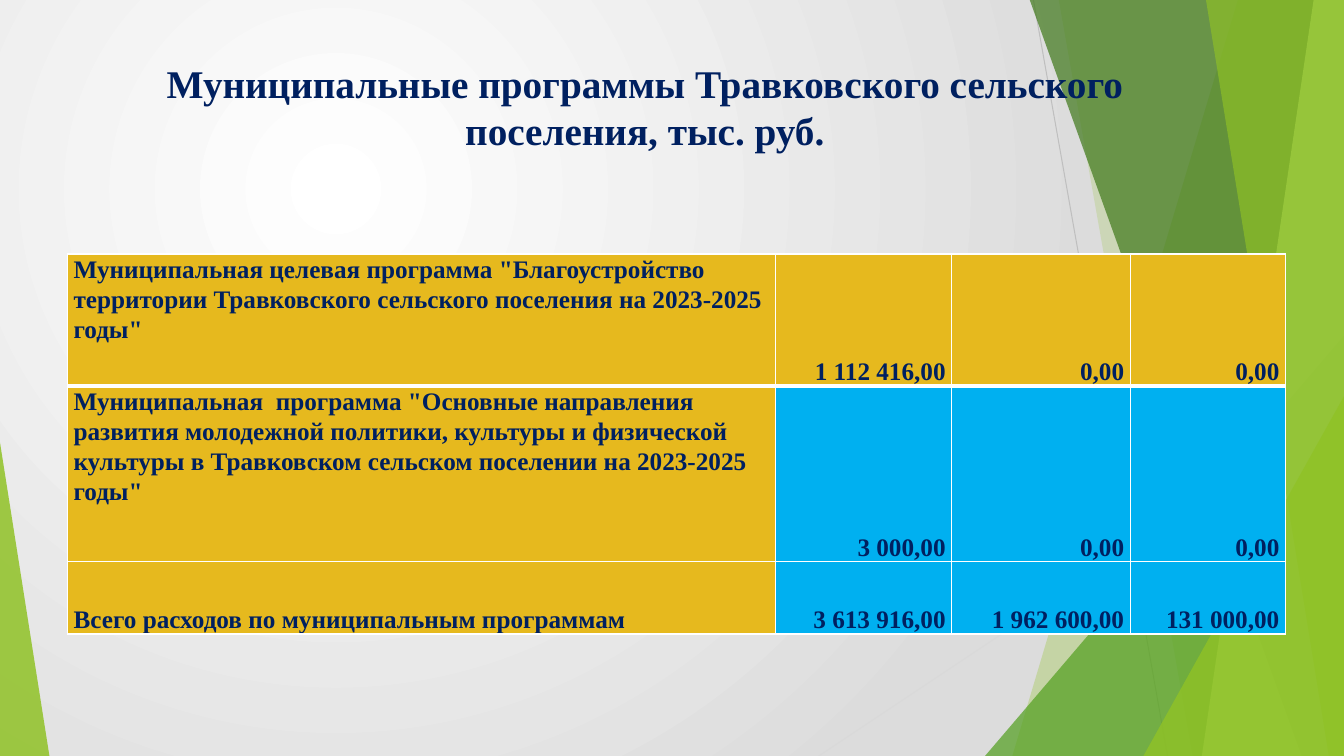
from dataclasses import dataclass

from lxml import etree
from pptx import Presentation
from pptx.dml.color import RGBColor
from pptx.enum.shapes import MSO_CONNECTOR, MSO_SHAPE
from pptx.enum.text import MSO_ANCHOR, MSO_AUTO_SIZE, PP_ALIGN
from pptx.oxml.ns import qn
from pptx.util import Pt

PX = 9144  # 100 px to the inch
WIDTH, HEIGHT = 1333, 750
TITLE_ONLY = 5
STRAIGHT, TRIANGLE = MSO_CONNECTOR.STRAIGHT, MSO_SHAPE.ISOSCELES_TRIANGLE
TOP, BOTTOM = MSO_ANCHOR.TOP, MSO_ANCHOR.BOTTOM
LEFT, CENTER, RIGHT = PP_ALIGN.LEFT, PP_ALIGN.CENTER, PP_ALIGN.RIGHT
NO_AUTOFIT = MSO_AUTO_SIZE.NONE


@dataclass(frozen=True)
class Theme:
    font: str = "Times New Roman"
    title_size: int = 28
    cell_size: int = 18
    ink: str = "002060"
    light: str = "FFFFFF"
    shade: str = "DCDCDC"
    gold: str = "E6B91E"
    blue: str = "00B0F0"
    green: str = "90C226"
    leaf: str = "54A021"
    forest: str = "3F7819"
    lime: str = "C0E474"
    rays: tuple = ("BFBFBF", "D9D9D9")


THEME = Theme()

TITLE = "Муниципальные программы Травковского сельского поселения, тыс. руб."
COLUMNS = (702, 175, 177, 154)
# row height, anchor of the name, fill of the amounts, cell texts
PROGRAMS = (
    (131, TOP, THEME.gold,
     ('Муниципальная целевая программа "Благоустройство территории '
      'Травковского сельского поселения на 2023-2025 годы"',
      "1 112 416,00", "0,00", "0,00")),
    (174, TOP, THEME.blue,
     ('Муниципальная  программа "Основные направления развития молодежной '
      'политики, культуры и физической культуры в Травковском сельском '
      'поселении на 2023-2025  годы"',
      "3 000,00", "0,00", "0,00")),
    (72, BOTTOM, THEME.blue,
     ("Всего расходов по муниципальным программам",
      "3 613 916,00", "1 962 600,00", "131 000,00")),
)


def rgb(value):
    return RGBColor.from_string(value)


def set_attrs(obj, **values):
    for name, value in values.items():
        setattr(obj, name, value)


def write(tf, text, size, align, spacing=1.0):
    p = tf.paragraphs[0]
    set_attrs(p, alignment=align, line_spacing=spacing)
    r = p.add_run()
    r.text = text
    set_attrs(r.font, name=THEME.font, size=Pt(size), bold=True)
    r.font.color.rgb = rgb(THEME.ink)


def paint(sp, color, opacity):
    """Fill with a translucent colour, without outline or shadow."""
    sp.shadow.inherit = False
    sp.line.fill.background()
    sp.fill.solid()
    sp.fill.fore_color.rgb = rgb(color)
    clr = sp.fill._xPr.find(".//" + qn("a:srgbClr"))
    etree.SubElement(clr, qn("a:alpha"), val=str(opacity * 1000))


def add_ray(slide, start, end, color):
    line = slide.shapes.add_connector(
        STRAIGHT, *(v * PX for v in (*start, *end)))
    line.line.color.rgb = rgb(color)
    line.line.width = Pt(0.75)
    etree.SubElement(line._element.spPr, qn("a:effectLst"))


def add_band(slide, box, top_x, bottom_x, color, opacity):
    """A band from a slanted left edge to the right side of the box."""
    x, y, w, h = box
    pen = slide.shapes.build_freeform(top_x, y, scale=PX)
    pen.add_line_segments(
        [(x + w, y), (x + w, y + h), (bottom_x, y + h)], close=True)
    paint(pen.convert_to_shape(), color, opacity)


def add_corner(slide, box, apex, color, opacity):
    sp = slide.shapes.add_shape(TRIANGLE, *(v * PX for v in box))
    sp.adjustments[0] = apex
    paint(sp, color, opacity)


def add_background(slide):
    fill = slide.background.fill
    fill.gradient()
    stops = zip(fill.gradient_stops, (0, 1), (THEME.light, THEME.shade))
    for stop, position, color in stops:
        stop.position = position
        stop.color.rgb = rgb(color)
    grad = slide._element.find(".//" + qn("a:gradFill"))
    grad.remove(grad.find(qn("a:lin")))
    circle = etree.SubElement(grad, qn("a:path"), {"path": "circle"})
    etree.SubElement(circle, qn("a:fillToRect"),
                     l="50000", t="50000", r="100000", b="100000")


def add_facets(slide, box):
    x, y, w, h = box
    right, bottom = x + w, y + h
    band_box = (x, y - 1, w, h + 1)
    add_ray(slide, (x + 1025, y), (x + 1158, bottom), THEME.rays[0])
    add_ray(slide, (right, y + 403), (x + 812, bottom), THEME.rays[1])
    add_band(slide, band_box, x + 1228, x + 1004, THEME.green, 30)
    add_band(slide, band_box, x + 1050, x + 1183, THEME.green, 20)
    add_corner(slide, (right - 356, bottom - 417, 356, 417), 1, THEME.leaf, 72)
    add_band(slide, band_box, x + 1021, x + 1291, THEME.forest, 70)
    add_band(slide, band_box, x + 1303, x + 1192, THEME.lime, 70)
    add_band(slide, band_box, x + 1196, x + 1318, THEME.green, 65)
    add_corner(slide, (right - 199, bottom - 357, 199, 357), 1, THEME.green, 80)
    add_corner(slide, (x, bottom - 311, 49, 311), 0, THEME.green, 85)


def add_title(slide, box):
    title = slide.shapes.title
    slide.shapes._spTree.append(title._element)  # in front of the facets
    names = ("left", "top", "width", "height")
    set_attrs(title, **dict(zip(names, (v * PX for v in box))))
    tf = title.text_frame
    set_attrs(tf, word_wrap=True, auto_size=NO_AUTOFIT, vertical_anchor=TOP)
    write(tf, TITLE, THEME.title_size, CENTER)


def add_borders(cell, **widths):
    tc_pr = cell._tc.get_or_add_tcPr()
    for side in "LRTB":
        width = Pt(widths.get(side, 1))
        ln = etree.SubElement(tc_pr, qn("a:ln" + side), w=str(width))
        solid = etree.SubElement(ln, qn("a:solidFill"))
        etree.SubElement(solid, qn("a:srgbClr"), val=THEME.light)


def add_programs(slide, box):
    frame = slide.shapes.add_table(
        len(PROGRAMS), len(COLUMNS), *(v * PX for v in box))
    table = frame.table
    for column, width in zip(table.columns, COLUMNS):
        column.width = width * PX
    for i, (height, anchor, amount_fill, texts) in enumerate(PROGRAMS):
        table.rows[i].height = height * PX
        rule = {0: {"B": 3}, 1: {"T": 3}}.get(i, {})
        for j, text in enumerate(texts):
            cell = table.cell(i, j)
            is_name = j == 0
            set_attrs(cell, margin_left=6 * PX, margin_right=6 * PX,
                      margin_top=0, margin_bottom=0,
                      vertical_anchor=anchor if is_name else BOTTOM)
            add_borders(cell, **rule)
            cell.fill.solid()
            cell.fill.fore_color.rgb = rgb(
                THEME.gold if is_name else amount_fill)
            write(cell.text_frame, text, THEME.cell_size,
                  LEFT if is_name else RIGHT, 1.07)


def main():
    prs = Presentation()
    set_attrs(prs, slide_width=WIDTH * PX, slide_height=HEIGHT * PX)
    slide = prs.slides.add_slide(prs.slide_layouts[TITLE_ONLY])
    add_background(slide)
    add_facets(slide, (0, 0, WIDTH, HEIGHT))
    add_title(slide, (106, 54, 1067, 125))
    add_programs(slide, (67, 252, sum(COLUMNS), sum(p[0] for p in PROGRAMS)))
    prs.save("out.pptx")


if __name__ == "__main__":
    main()
